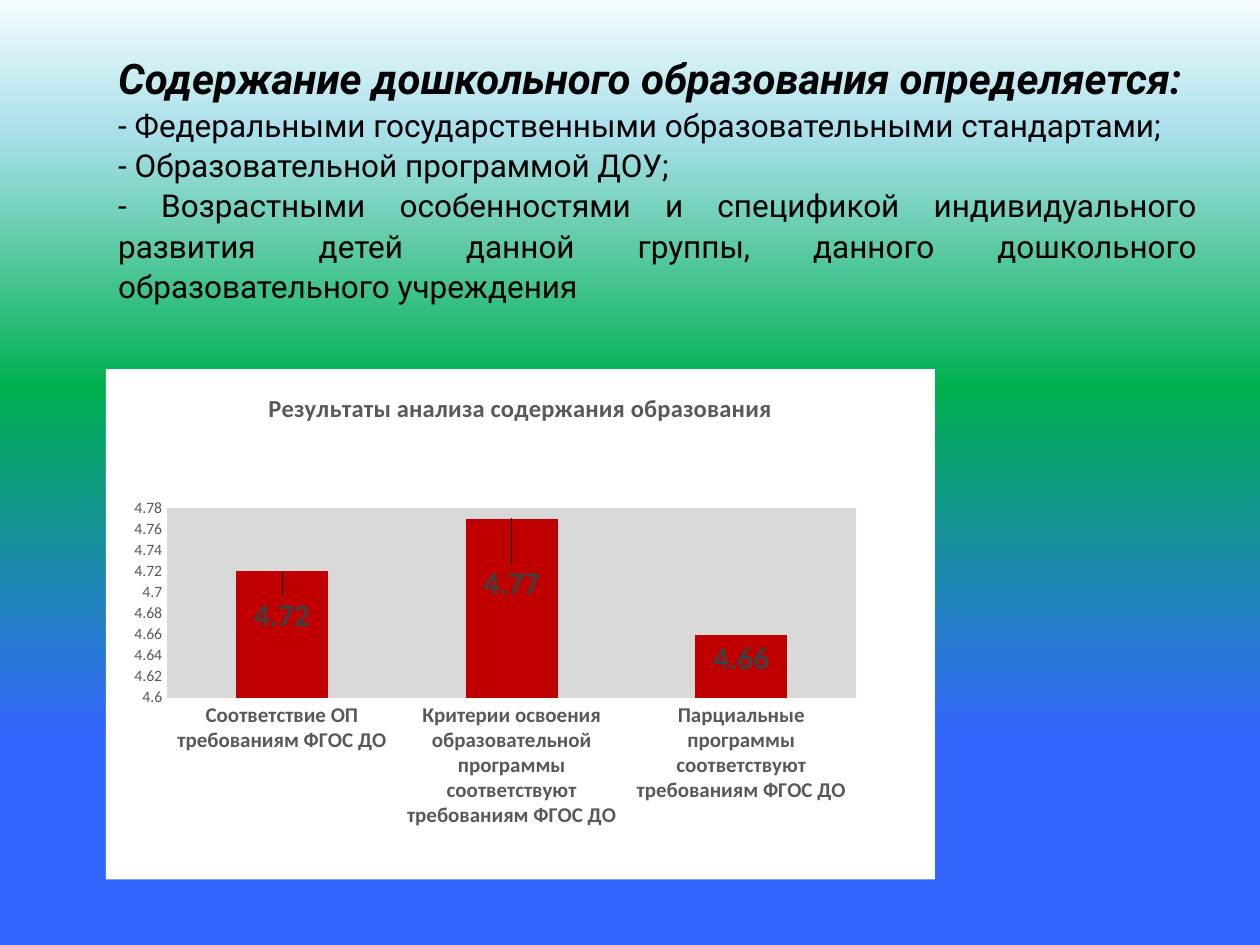
"""Build the slide on the content of preschool education."""
from typing import NamedTuple

from lxml.etree import SubElement as Sub
from pptx import Presentation
from pptx.chart.data import CategoryChartData as Data
from pptx.dml.color import RGBColor
from pptx.enum.chart import XL_CHART_TYPE as Kind
from pptx.enum.chart import XL_LABEL_POSITION as Spot
from pptx.enum.chart import XL_TICK_MARK as Tick
from pptx.enum.text import PP_ALIGN as Align
from pptx.oxml import parse_xml
from pptx.oxml.ns import nsdecls, qn
from pptx.util import Inches, Pt

BLACK = RGBColor(0x00, 0x00, 0x00)
WHITE = RGBColor(0xFF, 0xFF, 0xFF)
RED = RGBColor(0xC0, 0x00, 0x00)
GRAY = RGBColor(0x59, 0x59, 0x59)
DARK = RGBColor(0x40, 0x40, 0x40)
PALE = RGBColor(0xD9, 0xD9, 0xD9)
STOPS = (
    (0, RGBColor(0xF5, 0xFC, 0xFD)),
    (14, RGBColor(0xA9, 0xE0, 0xEB)),
    (41, RGBColor(0x00, 0xB0, 0x50)),
    (78, RGBColor(0x33, 0x66, 0xFF)),
)


class Bar(NamedTuple):
    name: str
    value: float
    drop: float


HEAD = "Содержание дошкольного образования определяется:"
ITEMS = (
    "- Федеральными государственными образовательными стандартами;",
    "- Образовательной программой ДОУ;",
    "- Возрастными особенностями и спецификой индивидуального развития детей "
    "данной группы, данного дошкольного образовательного учреждения",
)
BARS = (
    Bar("Соответствие ОП требованиям ФГОС ДО", 4.72, 0.04),
    Bar("Критерии освоения образовательной программы соответствуют "
        "требованиям ФГОС ДО", 4.77, 0.08),
    Bar("Парциальные программы соответствуют требованиям ФГОС ДО", 4.66, 0),
)


def style(font, size: float, color: RGBColor, bold: bool = False,
          face: str = "Calibri") -> None:
    font.name, font.size, font.bold = face, Pt(size), bold
    font.color.rgb = color


def paint(fill, color: RGBColor) -> None:
    fill.solid()
    fill.fore_color.rgb = color


def shade(slide) -> None:
    fill = slide.background.fill
    fill.gradient()
    fill.gradient_angle = 270
    grad = slide.element.find(".//" + qn("a:gradFill"))
    stops = grad.find(qn("a:gsLst"))
    for old in list(stops):
        stops.remove(old)
    for pos, color in STOPS:
        stop = Sub(stops, qn("a:gs"), pos=str(pos * 1000))
        Sub(stop, qn("a:srgbClr"), val=str(color))


def write(slide) -> None:
    box = slide.shapes.add_textbox(
        Inches(0.84), Inches(0.34), Inches(8.76), Inches(2.59))
    frame = box.text_frame
    frame.word_wrap = True
    frame.text = "\n".join((HEAD, *ITEMS))
    for para in frame.paragraphs:
        para.line_spacing = 1.07
        para.alignment = Align.JUSTIFY
        style(para.runs[0].font, 18, BLACK, face="Roboto")
    head = frame.paragraphs[0]
    head.alignment = Align.LEFT
    style(head.runs[0].font, 24, BLACK, True, "Roboto")
    head.runs[0].font.italic = True


def layout(**parts) -> object:
    tags = "".join(f'<c:{key} val="{val}"/>' for key, val in parts.items())
    return parse_xml(f'<c:layout {nsdecls("c")}><c:manualLayout>{tags}'
                     '</c:manualLayout></c:layout>')


def plain(axis, size: float, bold: bool) -> None:
    style(axis.tick_labels.font, size, GRAY, bold)
    axis.major_tick_mark = axis.minor_tick_mark = Tick.NONE
    axis.format.line.fill.background()


def label(series) -> None:
    for i, bar in enumerate(BARS):
        tag = series.points[i].data_label
        style(tag.font, 18, DARK, True)
        tag.position = Spot.INSIDE_END
        if bar.drop:
            node = series.points[i].data_label.font._element.getparent()
            while node.tag != qn("c:dLbl"):
                node = node.getparent()
            node.insert(1, layout(x=0, y=bar.drop))


def plot(slide) -> None:
    data = Data(number_format="General")
    data.categories = [bar.name for bar in BARS]
    data.add_series("Series 1", [bar.value for bar in BARS])
    chart = slide.shapes.add_chart(
        Kind.COLUMN_CLUSTERED, Inches(0.84), Inches(2.93),
        Inches(6.58), Inches(4.05), data).chart
    style(chart.font, 10, BLACK)
    chart.has_legend = False
    chart.has_title = True
    title = chart.chart_title.text_frame
    title.text = "Результаты анализа содержания образования"
    style(title.paragraphs[0].runs[0].font, 14, GRAY, True)

    plain(chart.category_axis, 12, True)
    axis = chart.value_axis
    plain(axis, 9, False)
    axis.minimum_scale, axis.maximum_scale, axis.major_unit = 4.6, 4.78, 0.02
    grid = axis.major_gridlines.format.line
    grid.color.rgb, grid.width = PALE, Pt(0.75)

    bars = chart.plots[0]
    bars.gap_width = 150
    bars.vary_by_categories = False
    paint(bars.series[0].format.fill, RED)
    label(bars.series[0])

    root = chart.element
    area = root.find(".//" + qn("c:plotArea"))
    for old in area.findall(qn("c:layout")):
        area.remove(old)
    area.insert(0, layout(layoutTarget="inner", xMode="edge", yMode="edge",
                          x=0.074, y=0.273, w=0.831, h=0.371))
    back = ('<c:spPr {}><a:solidFill><a:srgbClr val="{}"/></a:solidFill>'
            '<a:ln><a:noFill/></a:ln></c:spPr>')
    area.append(parse_xml(back.format(nsdecls("c", "a"), PALE)))
    root.find(qn("c:chart")).addnext(
        parse_xml(back.format(nsdecls("c", "a"), WHITE)))


def main() -> None:
    deck = Presentation()
    deck.slide_width, deck.slide_height = Inches(10), Inches(7.5)
    slide = deck.slides.add_slide(deck.slide_layouts[6])
    shade(slide)
    plot(slide)
    write(slide)
    deck.save("out.pptx")


if __name__ == "__main__":
    main()
